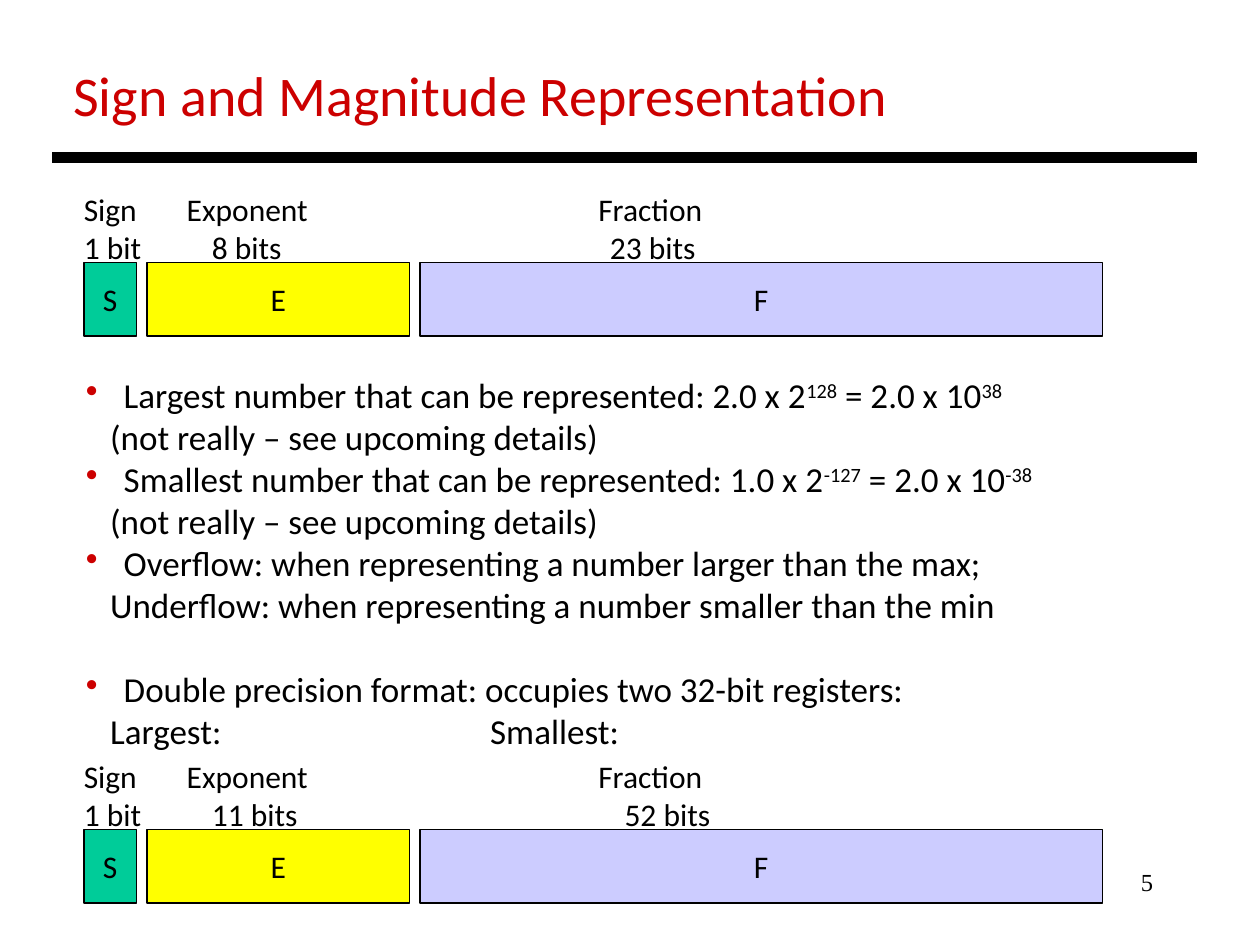
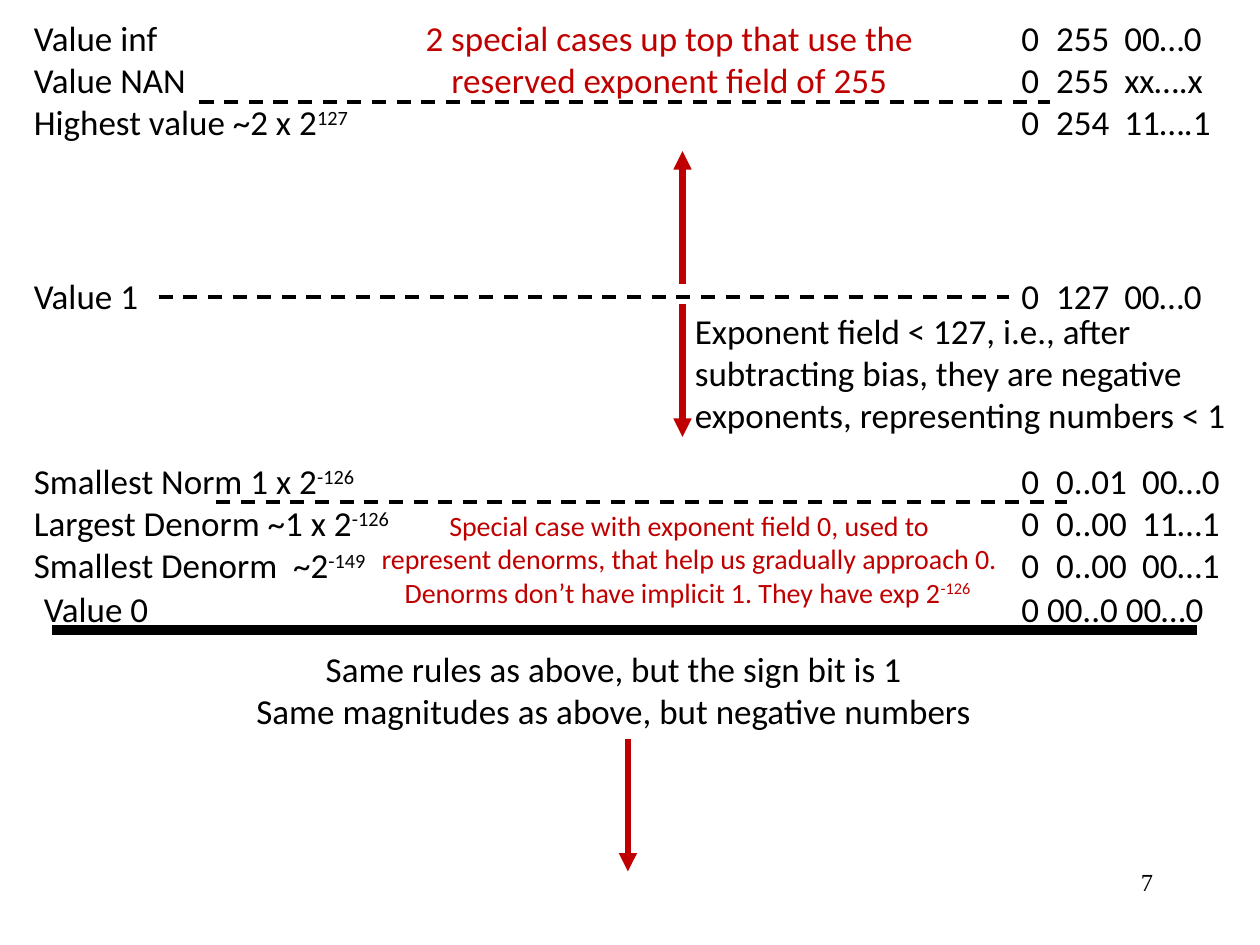
"""Build two slides on floating-point number formats."""
from dataclasses import dataclass
from typing import NamedTuple

from lxml import etree
from pptx import Presentation
from pptx.dml.color import RGBColor
from pptx.enum.dml import MSO_LINE
from pptx.enum.shapes import MSO_CONNECTOR, MSO_SHAPE
from pptx.enum.text import MSO_ANCHOR, MSO_AUTO_SIZE, PP_ALIGN
from pptx.oxml.ns import qn
from pptx.slide import Slide
from pptx.text.text import TextFrame, _Paragraph
from pptx.util import Emu, Inches, Pt

LEFT, MID, RIGHT = PP_ALIGN.LEFT, PP_ALIGN.CENTER, PP_ALIGN.RIGHT
CENTRED = MSO_ANCHOR.MIDDLE
GROW = MSO_AUTO_SIZE.SHAPE_TO_FIT_TEXT
RECT = MSO_SHAPE.RECTANGLE
STRAIGHT = MSO_CONNECTOR.STRAIGHT
DASH = MSO_LINE.DASH

COLS, ROWS = 120, 90
CELL = Inches(10) / COLS


@dataclass(frozen=True)
class Theme:
    """Colours, fonts, type sizes and line widths."""
    ink: str = "000000"
    title: str = "CC0000"
    accent: str = "C00000"
    green: str = "00CC99"
    yellow: str = "FFFF00"
    lilac: str = "CCCCFF"
    font: str = "Calibri"
    serif: str = "Times New Roman"
    head: int = 32
    body: int = 20
    label: int = 18
    small: int = 16
    number: int = 14
    bar: float = 6
    arrow: float = 3.5
    dash: float = 2
    edge: float = 0.75


THEME = Theme()


class Line(NamedTuple):
    """One paragraph; every second piece between bars is raised."""
    text: str
    tabs: tuple[float, ...] = ()
    indent: float = 0
    bullet: bool = False
    before: float = 0


class Note(NamedTuple):
    """A text box, placed in grid cells."""
    left: float
    top: float
    width: float
    height: float
    lines: list[Line]
    size: int = THEME.body
    color: str = THEME.ink
    align: PP_ALIGN = LEFT
    font: str = THEME.font
    wrap: bool = False


class Rule(NamedTuple):
    """A straight line between two grid points."""
    start: tuple[float, float]
    end: tuple[float, float]
    width: float
    color: str = THEME.ink
    dashed: bool = False
    arrow: bool = False


class Field(NamedTuple):
    """One field of a number format."""
    name: str
    width: float
    fill: str


FIELDS = (Field("S", 5, THEME.green), Field("E", 25, THEME.yellow),
          Field("F", 65, THEME.lilac))
FIELD_LEFT, FIELD_GAP, FIELD_HIGH = 8, 1, 7
BAR_LEFT, BAR_RIGHT = 5, 114
BITS_LEFT, VALUE_LEFT = 96.1, 2.04
BIT_TABS, LONG_TABS = (3.3, 9.8), (3.3, 11.5)
DASH_LONG, ARROW_LONG = 81, 12.6


def grid(cells: float) -> Emu:
    """Turn grid cells into a length."""
    return Emu(round(cells * CELL))


def rows(*texts: str, tabs: tuple[float, ...] = ()) -> list[Line]:
    """Make plain lines that share their tab stops."""
    return [Line(text, tabs) for text in texts]


def write_line(para: _Paragraph, line: Line, note: Note) -> None:
    """Fill one paragraph and format its runs."""
    for order, piece in enumerate(line.text.split("|")):
        if not piece:
            continue
        run = para.add_run()
        run.text = piece
        run.font.size = Pt(note.size)
        run.font.name = note.font
        run.font.color.rgb = RGBColor.from_string(note.color)
        if order % 2:
            run.font._element.set("baseline", "30000")
    para.alignment = note.align
    if line.before:
        para.space_before = Pt(line.before)
    props = para._p.get_or_add_pPr()
    if line.indent:
        props.set("marL", str(grid(line.indent)))
        props.set("indent", str(-grid(line.indent) if line.bullet else 0))
    if line.bullet:
        tint = etree.SubElement(props, qn("a:buClr"))
        etree.SubElement(tint, qn("a:srgbClr"), val=THEME.title)
        etree.SubElement(props, qn("a:buChar"), char="•")
    if line.tabs:
        stops = etree.SubElement(props, qn("a:tabLst"))
        for stop in line.tabs:
            etree.SubElement(stops, qn("a:tab"), pos=str(grid(stop)), algn="l")


def write(frame: TextFrame, note: Note) -> None:
    """Fill a text frame with the lines of a note."""
    frame.word_wrap = note.wrap
    for order, line in enumerate(note.lines):
        para = frame.add_paragraph() if order else frame.paragraphs[0]
        write_line(para, line, note)


def draw_note(slide: Slide, note: Note) -> None:
    """Draw a text box."""
    box = slide.shapes.add_textbox(*map(grid, note[:4]))
    write(box.text_frame, note)
    if not note.wrap:
        box.text_frame.auto_size = GROW


def draw_rule(slide: Slide, rule: Rule) -> None:
    """Draw a line, dashed or with an arrowhead if asked."""
    link = slide.shapes.add_connector(STRAIGHT, *map(grid, rule.start + rule.end))
    link.line.width = Pt(rule.width)
    link.line.color.rgb = RGBColor.from_string(rule.color)
    if rule.dashed:
        link.line.dash_style = DASH
    if rule.arrow:
        etree.SubElement(link.line._get_or_add_ln(), qn("a:tailEnd"), type="triangle")
    etree.SubElement(link._element.spPr, qn("a:effectLst"))


def draw_format(slide: Slide, top: float, bits: Line) -> None:
    """Draw the three fields of a format below their labels."""
    names = Line("Sign\tExponent\tFraction", (9.8, 49))
    draw_note(slide, Note(6.8, top - 7.5, 63, 8.5, [names, bits], THEME.label))
    left = FIELD_LEFT
    for field in FIELDS:
        place = (left, top, field.width, FIELD_HIGH)
        box = slide.shapes.add_shape(RECT, *map(grid, place))
        box.shadow.inherit = False
        box.fill.solid()
        box.fill.fore_color.rgb = RGBColor.from_string(field.fill)
        box.line.color.rgb = RGBColor.from_string(THEME.ink)
        box.line.width = Pt(THEME.edge)
        box.text_frame.vertical_anchor = CENTRED
        write(box.text_frame, Note(*place, rows(field.name), THEME.label, align=MID))
        left += field.width + FIELD_GAP


def add_page(deck: Presentation, number: str, bar: float) -> Slide:
    """Add a blank slide with its number and heavy bar."""
    slide = deck.slides.add_slide(deck.slide_layouts[6])
    draw_note(slide, Note(86, 82, 25, 6, rows(number), THEME.number,
                          align=RIGHT, font=THEME.serif, wrap=True))
    draw_rule(slide, Rule((BAR_LEFT, bar), (BAR_RIGHT, bar), THEME.bar))
    return slide


def add_formats(deck: Presentation) -> None:
    """Add the slide on single and double formats."""
    slide = add_page(deck, "5", 15)
    draw_note(slide, Note(5.8, 5.2, 80.9, 7.7, rows("Sign and Magnitude Representation"),
                          THEME.head, THEME.title))
    draw_format(slide, 25, Line("1 bit\t8 bits\t23 bits", (12.2, 50.1)))
    aside = Line("(not really – see upcoming details)", indent=2.3)
    points = [
        Line("Largest number that can be represented: 2.0 x 2|128| = 2.0 x 10|38",
             indent=3.6, bullet=True),
        aside,
        Line("Smallest number that can be represented: 1.0 x 2|-127| = 2.0 x 10|-38",
             indent=3.6, bullet=True),
        aside,
        Line("Overflow: when representing a number larger than the max;",
             indent=3.6, bullet=True),
        Line("Underflow: when representing a number smaller than the min", indent=2.3),
        Line("Double precision format: occupies two 32-bit registers:",
             indent=3.6, bullet=True, before=24),
        Line("\tLargest:\tSmallest:", (2.3, 38.5)),
    ]
    draw_note(slide, Note(7, 35, 94, 37.6, points))
    draw_format(slide, 79, Line("1 bit\t11 bits\t52 bits", (12.2, 51.5)))


def add_range(deck: Presentation) -> None:
    """Add the slide on the range of values."""
    slide = add_page(deck, "7", 60)
    notes = [
        Note(BITS_LEFT, 55.4, 19.9, 5.3, rows("0 00..0 00…0")),
        Note(3, 55.4, 12.5, 5.3, rows("Value 0")),
        Note(VALUE_LEFT, 25.6, 12.5, 5.3, rows("Value 1")),
        Note(BITS_LEFT, 25.6, 19.7, 5.3, rows("0\t127\t00…0", tabs=BIT_TABS)),
        Note(VALUE_LEFT, 1, 33, 13.3,
             rows("Value inf", "Value NAN", "Highest value ~2 x 2|127")),
        Note(BITS_LEFT, 1, 20.5, 13.3,
             rows("0\t255\t00…0", "0\t255\txx….x", "0\t254\t11….1", tabs=BIT_TABS)),
        Note(VALUE_LEFT, 43.2, 37.1, 13.3,
             rows("Smallest Norm 1 x 2|-126", "Largest Denorm ~1 x 2|-126",
                  "Smallest Denorm\t~2|-149", tabs=(24.7,))),
        Note(BITS_LEFT, 43.2, 21.4, 13.3,
             rows("0\t0..01\t00…0", "0\t0..00\t11…1", "0\t0..00\t00…1",
                  tabs=LONG_TABS)),
        Note(23, 61.1, 70.9, 9.2,
             rows("Same rules as above, but the sign bit is 1",
                  "Same magnitudes as above, but negative numbers"), align=MID),
        Note(65, 28.9, 53.5, 13.3,
             rows("Exponent field < 127, i.e., after",
                  "subtracting bias, they are negative",
                  "exponents, representing numbers < 1")),
        Note(39.1, 1, 49.3, 9.2,
             rows("2 special cases up top that use the",
                  "reserved exponent field of 255"), color=THEME.accent, align=MID),
        Note(34.8, 47.8, 61.7, 10.9,
             rows("Special case with exponent field 0, used to",
                  "represent denorms, that help us gradually approach 0.",
                  "Denorms don’t have implicit 1. They have exp 2|-126 "),
             THEME.small, THEME.accent, MID),
    ]
    for note in notes:
        draw_note(slide, note)
    for left, top in ((15.1, 28.3), (19, 9.7), (20.6, 47.8)):
        draw_rule(slide, Rule((left, top), (left + DASH_LONG, top), THEME.dash,
                              dashed=True))
    for left, top, way in ((59.8, 70.4, 1), (65, 29, 1), (65, 27, -1)):
        draw_rule(slide, Rule((left, top), (left, top + way * ARROW_LONG),
                              THEME.arrow, THEME.accent, arrow=True))


def main() -> None:
    """Build and save the deck."""
    deck = Presentation()
    deck.slide_width, deck.slide_height = grid(COLS), grid(ROWS)
    add_formats(deck)
    add_range(deck)
    deck.save("out.pptx")


if __name__ == "__main__":
    main()
